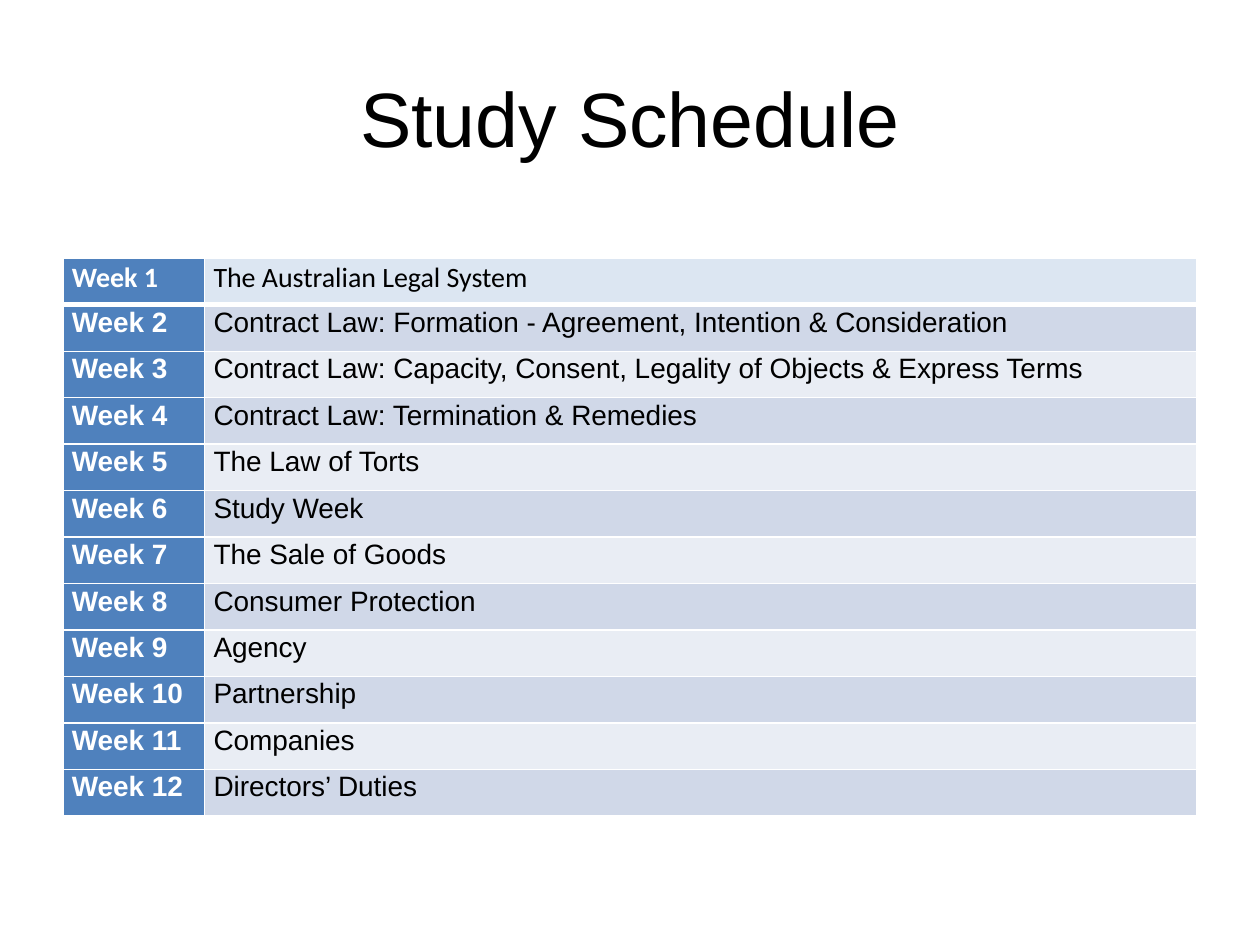
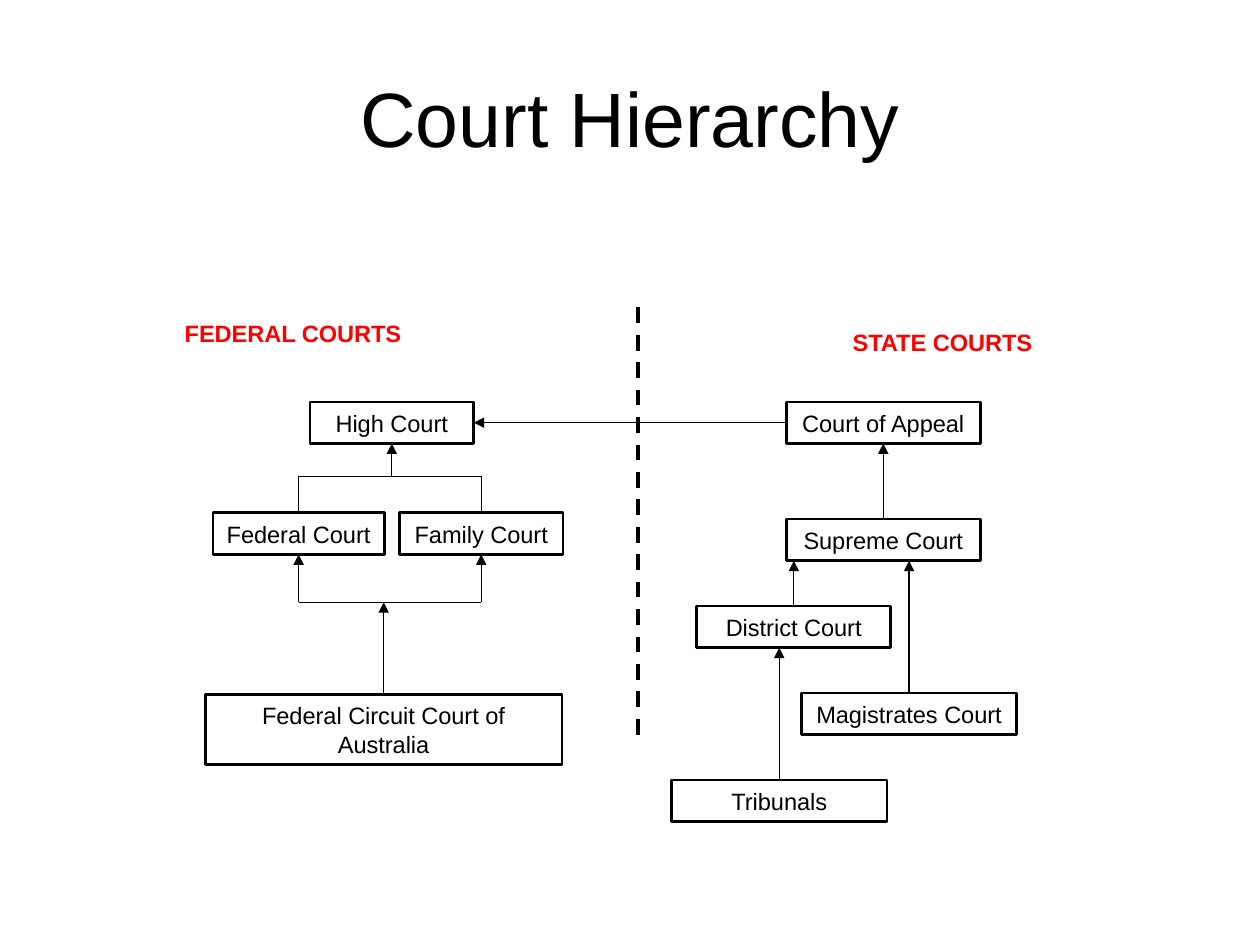
from collections import namedtuple

from lxml import etree
from pptx import Presentation
from pptx.dml.color import RGBColor
from pptx.enum.dml import MSO_LINE
from pptx.enum.shapes import MSO_CONNECTOR, MSO_SHAPE
from pptx.enum.text import MSO_ANCHOR, PP_ALIGN
from pptx.oxml.ns import qn
from pptx.util import Inches, Pt

STRAIGHT, RECTANGLE = MSO_CONNECTOR.STRAIGHT, MSO_SHAPE.RECTANGLE
MIDDLE, CENTER, LEFT = MSO_ANCHOR.MIDDLE, PP_ALIGN.CENTER, PP_ALIGN.LEFT
DASH = MSO_LINE.DASH
TOP_SIDE, LEFT_SIDE, BOTTOM_SIDE, RIGHT_SIDE = range(4)
TITLE_ONLY = 5

COLORS = {
    "ink": "000000", "paper": "FFFFFF", "week": "4F81BD", "first": "DCE6F2",
    "dark band": "D0D8E8", "light band": "E9EDF4", "heading": "FF0000",
}
FONT, FIRST_ROW_FONT = "Arial", "Calibri"

# The slide is a grid of 100 columns and 75 rows of equal size.
UNIT = Inches(0.1)
COLUMNS, ROWS = 100, 75
Box = namedtuple("Box", "left top width height")
TITLE_BOX = Box(5, 3, 90, 12.5)
SCHEDULE_BOX = Box(5, 20.5, 90, 44.3)
HIERARCHY_BOX = Box(12.5, 24.4, 75, 41)

TOPICS = [
    "The Australian Legal System",
    "Contract Law: Formation - Agreement, Intention & Consideration",
    "Contract Law: Capacity, Consent, Legality of Objects & Express Terms",
    "Contract Law: Termination & Remedies",
    "The Law of Torts",
    "Study Week",
    "The Sale of Goods",
    "Consumer Protection",
    "Agency",
    "Partnership",
    "Companies",
    "Directors’ Duties",
]

# Boxes are relative to the hierarchy's own corner.
COURT_HEIGHT = 3.3
COURTS = {
    "High Court": Box(12.1, 7.5, 13, COURT_HEIGHT),
    "Federal Court": Box(4.4, 16.3, 13.6, COURT_HEIGHT),
    "Family Court": Box(19.2, 16.3, 13, COURT_HEIGHT),
    "Federal Circuit Court of Australia": Box(3.8, 30.7, 28.3, 5.6),
    "Court of Appeal": Box(49.9, 7.5, 15.4, COURT_HEIGHT),
    "Supreme Court": Box(49.9, 16.8, 15.4, COURT_HEIGHT),
    "District Court": Box(42.8, 23.7, 15.4, COURT_HEIGHT),
    "Magistrates Court": Box(51.1, 30.6, 17.1, COURT_HEIGHT),
    "Tribunals": Box(40.8, 37.5, 17.1, COURT_HEIGHT),
}
HEADINGS = {
    "FEDERAL COURTS": Box(0, 0.4, 21.5, COURT_HEIGHT),
    "STATE COURTS": Box(49.6, 1.1, 25.4, COURT_HEIGHT),
}
STATE_APPEALS = [
    ("Supreme Court", "Court of Appeal"),
    ("District Court", "Supreme Court"),
    ("Magistrates Court", "Supreme Court"),
    ("Tribunals", "District Court"),
]
UPPER_BAR, LOWER_BAR = 13.4, 23.4
DIVIDER_COLUMN, DIVIDER_ROWS = 38.1, (0, 34.3)


def color(name):
    return RGBColor.from_string(COLORS[name])


def grid(*counts):
    return [round(count * UNIT) for count in counts]


def within(outer, inner):
    return inner._replace(left=outer.left + inner.left, top=outer.top + inner.top)


def write(text_frame, text, size, ink="ink", bold=False, font=FONT, align=CENTER):
    paragraph = text_frame.paragraphs[0]
    paragraph.alignment = align
    run = paragraph.add_run()
    run.text = text
    run.font.size = Pt(size)
    run.font.name = font
    run.font.bold = bold
    run.font.color.rgb = color(ink)
    return paragraph


def add_titled_slide(presentation, title_text):
    slide = presentation.slides.add_slide(presentation.slide_layouts[TITLE_ONLY])
    title = slide.shapes.title
    title.left, title.top, title.width, title.height = grid(*TITLE_BOX)
    title.text_frame.vertical_anchor = MIDDLE
    write(title.text_frame, title_text, 44)
    return slide


def set_cell_borders(cell, top=1, bottom=1):
    properties = cell._tc.get_or_add_tcPr()
    for side, points in (("L", 1), ("R", 1), ("T", top), ("B", bottom)):
        line = etree.SubElement(properties, qn(f"a:ln{side}"), w=str(Pt(points)))
        fill = etree.SubElement(line, qn("a:solidFill"))
        etree.SubElement(fill, qn("a:srgbClr"), val=COLORS["paper"])


def fill_schedule_cell(cell, text, row, fill, ink, bold):
    set_cell_borders(cell, top=3 if row == 1 else 1, bottom=3 if row == 0 else 1)
    cell.fill.solid()
    cell.fill.fore_color.rgb = color(fill)
    cell.margin_left = cell.margin_right = Inches(0.07)
    cell.margin_top = cell.margin_bottom = 0
    font = FIRST_ROW_FONT if row == 0 else FONT
    paragraph = write(cell.text_frame, text, 16, ink, bold, font, LEFT)
    paragraph.line_spacing = 1.07


def add_schedule(slide, box):
    table = slide.shapes.add_table(len(TOPICS), 2, *grid(*box)).table
    table.first_row = table.horz_banding = False
    for column, share in zip(table.columns, (1 / 8, 7 / 8)):
        column.width, = grid(box.width * share)
    for row, topic in enumerate(TOPICS):
        table.rows[row].height, = grid(box.height / len(TOPICS))
        band = "dark band" if row % 2 else "light band"
        fill_schedule_cell(table.cell(row, 0), f"Week {row + 1}", row,
                           "week", "paper", True)
        fill_schedule_cell(table.cell(row, 1), topic, row,
                           band if row else "first", "ink", False)


def add_court(slide, name, box):
    court = slide.shapes.add_shape(RECTANGLE, *grid(*box))
    court.shadow.inherit = False
    court.fill.background()
    court.line.color.rgb = color("ink")
    court.line.width = Pt(1.5)
    court.text_frame.word_wrap = True
    write(court.text_frame, name, 13.5)
    return court


def add_heading(slide, text, box):
    heading = slide.shapes.add_textbox(*grid(*box))
    heading.text_frame.word_wrap = True
    write(heading.text_frame, text, 13.5, "heading", True)


def add_line(slide, start, end, width=0.75, arrow=False):
    """Draw a line between two points in EMU."""
    line = slide.shapes.add_connector(STRAIGHT, *start, *end)
    line.line.color.rgb = color("ink")
    line.line.width = Pt(width)
    if arrow:
        etree.SubElement(line.line._get_or_add_ln(), qn("a:tailEnd"), type="triangle")
    etree.SubElement(line._element.spPr, qn("a:effectLst"))
    return line


def middle(shape):
    return shape.left + shape.width // 2


def bottom(shape):
    return shape.top + shape.height


def add_appeal(slide, lower, upper):
    """Draw an arrow straight up from the lower court to the upper one."""
    column = middle(lower)
    arrow = add_line(slide, (column, lower.top), (column, bottom(upper)), arrow=True)
    arrow.begin_connect(lower, TOP_SIDE)
    if column == middle(upper):
        arrow.end_connect(upper, BOTTOM_SIDE)


def add_federal_appeals(slide, courts, upper_bar, lower_bar):
    high, circuit = courts["High Court"], courts["Federal Circuit Court of Australia"]
    pair = courts["Federal Court"], courts["Family Court"]
    first, last = map(middle, pair)
    for bar in (upper_bar, lower_bar):
        add_line(slide, (first, bar), (last, bar))
    for court in pair:
        column = middle(court)
        stem = add_line(slide, (column, court.top), (column, upper_bar))
        stem.begin_connect(court, TOP_SIDE)
        arrow = add_line(slide, (column, lower_bar), (column, bottom(court)), arrow=True)
        arrow.end_connect(court, BOTTOM_SIDE)
    column = middle(high)
    arrow = add_line(slide, (column, upper_bar), (column, bottom(high)), arrow=True)
    arrow.end_connect(high, BOTTOM_SIDE)
    column = middle(circuit)
    arrow = add_line(slide, (column, circuit.top), (column, lower_bar), arrow=True)
    arrow.begin_connect(circuit, TOP_SIDE)


def add_hierarchy(slide, box):
    courts = {name: add_court(slide, name, within(box, place))
              for name, place in COURTS.items()}
    for text, place in HEADINGS.items():
        add_heading(slide, text, within(box, place))
    add_federal_appeals(slide, courts, *grid(box.top + UPPER_BAR, box.top + LOWER_BAR))
    for lower, upper in STATE_APPEALS:
        add_appeal(slide, courts[lower], courts[upper])

    appeal, high = courts["Court of Appeal"], courts["High Court"]
    row = high.top + high.height // 2
    crossing = add_line(slide, (appeal.left, row), (high.left + high.width, row),
                        arrow=True)
    crossing.begin_connect(appeal, LEFT_SIDE)
    crossing.end_connect(high, RIGHT_SIDE)

    start, end = (grid(box.left + DIVIDER_COLUMN, box.top + row) for row in DIVIDER_ROWS)
    divider = add_line(slide, start, end, width=2.25)
    divider.line.dash_style = DASH


def main():
    presentation = Presentation()
    presentation.slide_width, presentation.slide_height = grid(COLUMNS, ROWS)
    add_schedule(add_titled_slide(presentation, "Study Schedule"), SCHEDULE_BOX)
    add_hierarchy(add_titled_slide(presentation, "Court Hierarchy"), HIERARCHY_BOX)
    presentation.save("out.pptx")


if __name__ == "__main__":
    main()
